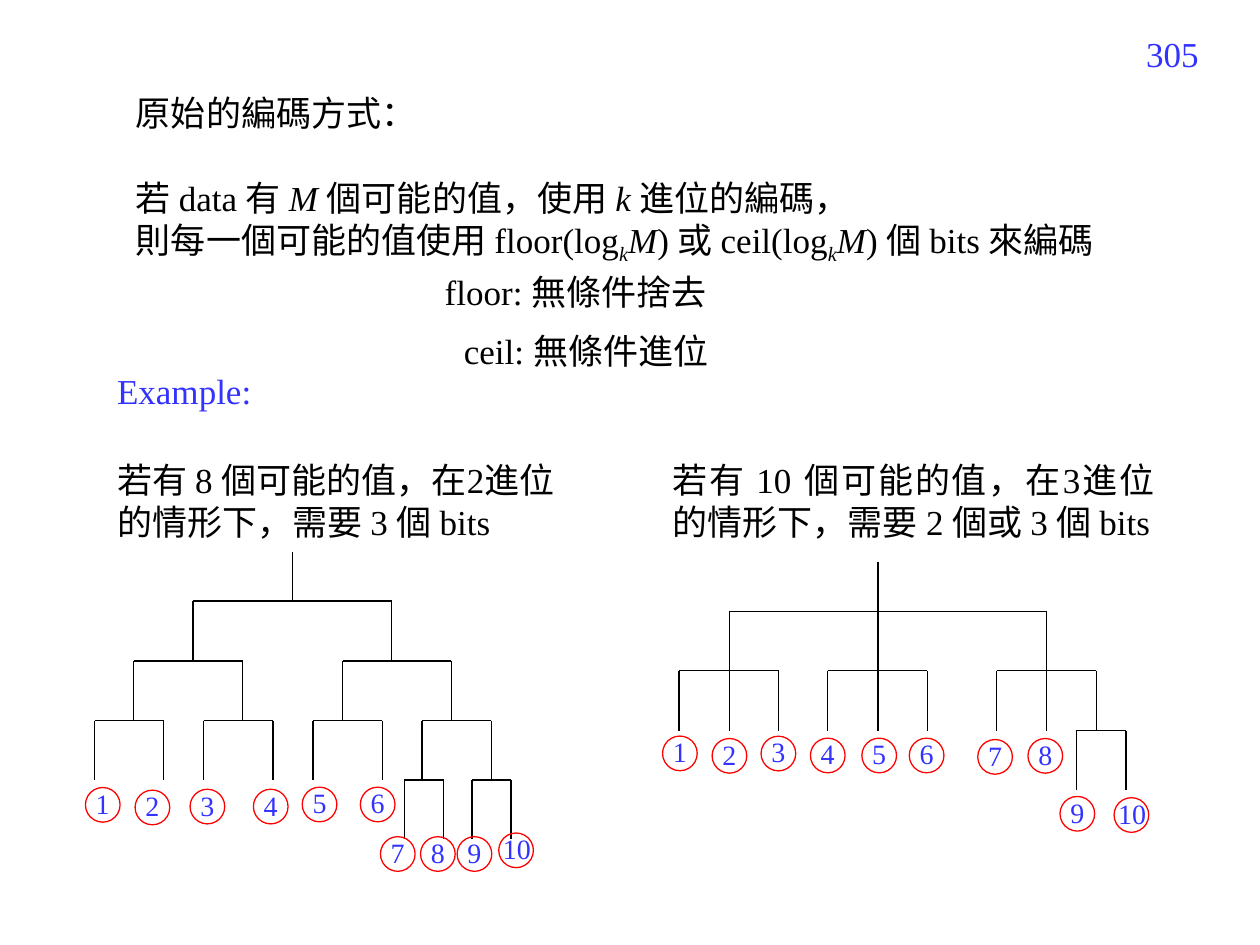
from pptx import Presentation
from pptx.dml.color import RGBColor
from pptx.enum.shapes import MSO_CONNECTOR, MSO_SHAPE
from pptx.enum.text import MSO_AUTO_SIZE, PP_ALIGN
from pptx.oxml.ns import qn
from pptx.util import Pt
from lxml import etree

STRAIGHT = MSO_CONNECTOR.STRAIGHT
ELLIPSE = MSO_SHAPE.OVAL
GROW = MSO_AUTO_SIZE.SHAPE_TO_FIT_TEXT
LEFT, RIGHT, JUSTIFY = PP_ALIGN.LEFT, PP_ALIGN.RIGHT, PP_ALIGN.JUSTIFY
BLACK = RGBColor(0, 0, 0)
BLUE = RGBColor(0x33, 0x33, 0xFF)
RED = RGBColor(0xFF, 0, 0)
PLAIN, ITALIC, SUBSCRIPT = range(3)


class SlideBuilder:
    font_name = "Times New Roman"
    body_size = 20
    leaf_size = 16
    line_width = 0.75
    circle_size = 19.8

    def __init__(self, slide):
        self.slide = slide

    def text(self, left, top, width, height, paragraphs, color=BLACK,
             align=LEFT, size=body_size, shapes=None):
        shapes = shapes or self.slide.shapes
        box = shapes.add_textbox(Pt(left), Pt(top), Pt(width), Pt(height))
        frame = box.text_frame
        frame.word_wrap = True
        frame.auto_size = GROW
        for index, (space_before, runs) in enumerate(paragraphs):
            paragraph = frame.add_paragraph() if index else frame.paragraphs[0]
            paragraph.alignment = align
            paragraph.space_before = Pt(space_before)
            paragraph.font.name = self.font_name
            paragraph.font.size = Pt(size)
            paragraph.font.color.rgb = color
            for words, style in runs:
                run = paragraph.add_run()
                run.text = words
                if style != PLAIN:
                    run.font.italic = True
                if style == SUBSCRIPT:
                    run._r.get_or_add_rPr().set("baseline", "-25000")

    def label(self, left, top, width, height, words, **options):
        self.text(left, top, width, height, [(0, [(words, PLAIN)])], **options)

    def line(self, x1, y1, x2, y2):
        connector = self.slide.shapes.add_connector(
            STRAIGHT, Pt(x1), Pt(y1), Pt(x2), Pt(y2))
        connector.line.color.rgb = BLACK
        connector.line.width = Pt(self.line_width)
        etree.SubElement(connector._element.spPr, qn("a:effectLst"))

    def fork(self, top, bottom, left, right):
        self.line(left, top, right, top)
        for x in (left, right):
            self.line(x, top, x, bottom)

    def leaf(self, number, left, top):
        shapes = self.slide.shapes.add_group_shape().shapes
        two_digits = number > 9
        self.label(left - (4.7 if two_digits else 1.2), top - 4.2,
                   34 if two_digits else 17.25, 26.6, str(number),
                   color=BLUE, size=self.leaf_size, shapes=shapes)
        circle = shapes.add_shape(ELLIPSE, Pt(left), Pt(top),
                                  Pt(self.circle_size), Pt(self.circle_size))
        circle.shadow.inherit = False
        circle.fill.background()
        circle.line.color.rgb = RED
        circle.line.width = Pt(self.line_width)

    def tree(self, trunk, levels, leaves):
        self.line(*trunk)
        for top, bottom, forks in levels:
            for left, right in forks:
                self.fork(top, bottom, left, right)
        for number, (left, top) in enumerate(leaves, 1):
            self.leaf(number, left, top)


def main():
    presentation = Presentation()
    presentation.slide_width, presentation.slide_height = Pt(720), Pt(540)
    builder = SlideBuilder(
        presentation.slides.add_slide(presentation.slide_layouts[6]))

    builder.label(524, 15, 168, 37.5, "305", color=BLUE, align=RIGHT)
    builder.text(70.6, 49, 595.5, 104.4, [
        (0, [("原始的編碼方式：", PLAIN)]),
        (24, [("若 data 有 ", PLAIN), ("M ", ITALIC),
              ("個可能的值，使用 ", PLAIN), ("k ", ITALIC),
              ("進位的編碼，", PLAIN)]),
        (0, [("則每一個可能的值使用 floor(log", PLAIN), ("k", SUBSCRIPT),
             ("M", ITALIC), (") 或 ceil(log", PLAIN), ("k", SUBSCRIPT),
             ("M", ITALIC), (") 個 bits 來編碼", PLAIN)]),
    ])
    builder.label(247, 151.2, 170, 31.5, "floor: 無條件捨去")
    builder.label(258, 185, 238, 31.5, "ceil: 無條件進位")
    builder.label(59.8, 207.4, 153.4, 31.5, "Example:", color=BLUE)
    builder.label(59.8, 258.5, 266.4, 55.4,
                  "若有 8 個可能的值，在2進位的情形下，需要 3 個 bits")
    builder.label(377.3, 258.5, 289.4, 55.4,
                  "若有 10 個可能的值，在3進位的情形下，需要 2 個或 3 個 bits",
                  align=JUSTIFY)

    builder.tree(
        (167, 315.5, 167, 343.5),
        [(343.5, 377.75, [(110.25, 223.75)]),
         (377.75, 411.75, [(76.5, 138.75), (195.75, 258)]),
         (411.75, 445.75, [(54 + 62.4 * i, 93.6 + 62.4 * i)
                           for i in range(4)]),
         (445.75, 479.5, [(231, 253.5), (269.75, 292)])],
        [(48.8, 450), (77.2, 451.5), (108.6, 451), (144.8, 451),
         (172.7, 449.8), (205.9, 449.8), (217.4, 478.1), (240.3, 478.1),
         (261.2, 478.1), (285, 476)])
    builder.tree(
        (501.8, 321, 501.8, 417.5),
        [(349.25, 417.5, [(416.8, 598.2)]),
         (383.25, 417.5, [(388, 445), (473, 530), (569.5, 626.5)]),
         (417.5, 451.5, [(615, 643.5)])],
        [(378.6, 420.6), (406.9, 422), (434.9, 420.7), (463.1, 421.8),
         (492.5, 421.8), (519.6, 421.8), (558.7, 422.6), (587.4, 422),
         (605.7, 455.1), (636.6, 455.8)])

    presentation.save("out.pptx")


if __name__ == "__main__":
    main()
